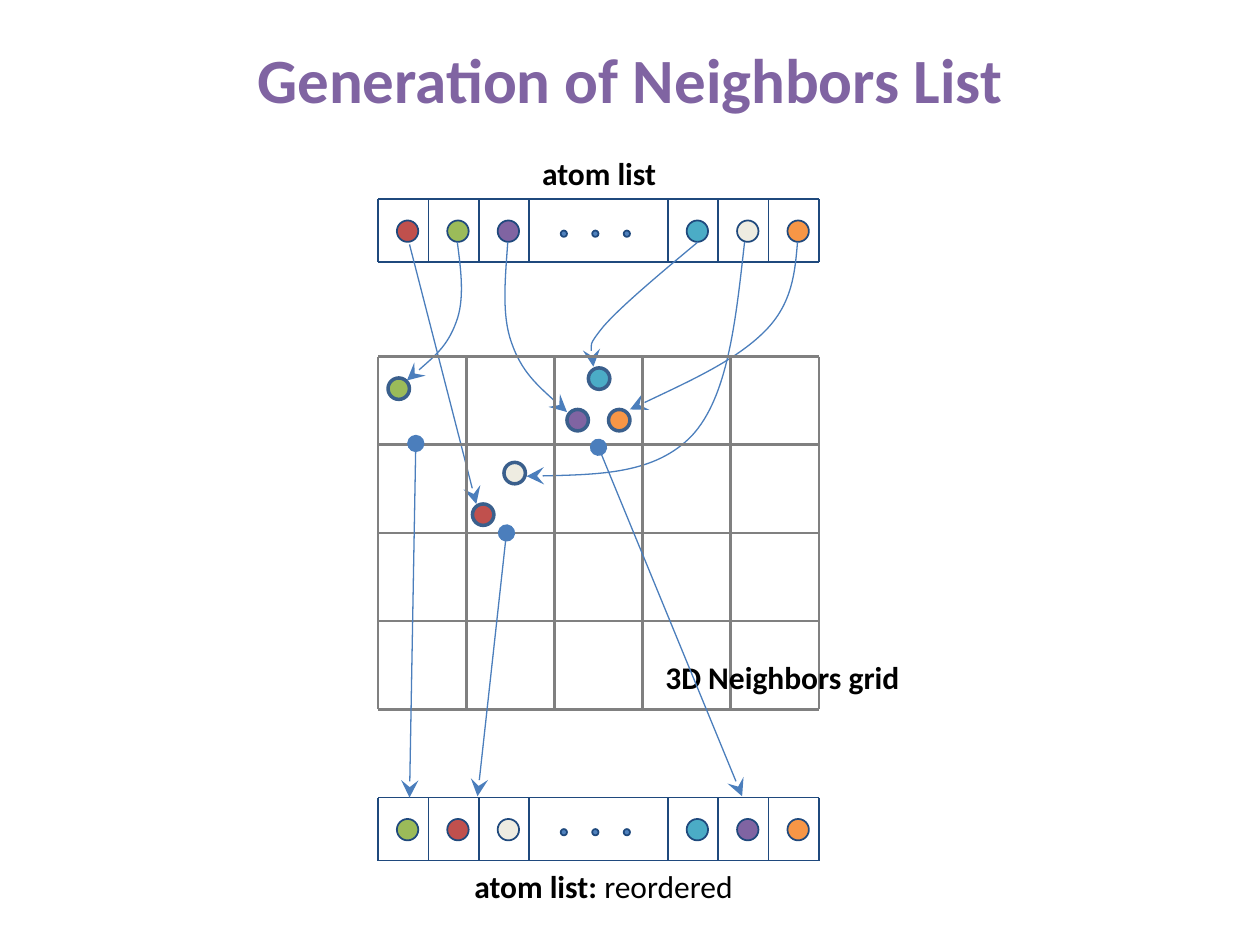
from dataclasses import dataclass
from itertools import accumulate

from lxml import etree
from pptx import Presentation
from pptx.dml.color import RGBColor
from pptx.enum.shapes import MSO_CONNECTOR, MSO_SHAPE
from pptx.enum.text import MSO_ANCHOR, MSO_AUTO_SIZE, PP_ALIGN
from pptx.oxml.ns import qn
from pptx.util import Inches, Pt

STRAIGHT = MSO_CONNECTOR.STRAIGHT
OVAL = MSO_SHAPE.OVAL
CENTER = PP_ALIGN.CENTER
MIDDLE = MSO_ANCHOR.MIDDLE
GROW = MSO_AUTO_SIZE.SHAPE_TO_FIT_TEXT


@dataclass(frozen=True)
class Theme:
    font: str = "Calibri"
    title_size: int = 36
    label_size: int = 18
    title: str = "8064A2"
    text: str = "000000"
    list_line: str = "1F497D"
    grid_line: str = "808080"
    atom_line: str = "3A5F8C"
    arrow: str = "4B7EBC"
    ellipsis: str = "4F81BD"
    list_width: float = 1
    grid_width: float = 1.5
    atom_width: float = 2
    arrow_width: float = 0.75


ATOM_COLORS = {
    "red": "C0504D", "green": "9BBB59", "purple": "8064A2",
    "teal": "4BACC6", "ivory": "EEECE1", "orange": "F79646",
}
ATOM_SIZE = 0.17
LIST_LEFT, LIST_HEIGHT = 3, 0.5
CELL_WIDTHS = [0.4] * 3 + [1.1] + [0.4] * 3
GRID_LEFT, GRID_TOP, GRID_CELL = 3, 2.83, 0.7
GRID_COLUMNS, GRID_ROWS = 5, 4

GRID_ATOMS = {
    "red": (3.75, 4), "green": (3.08, 3), "purple": (4.5, 3.25),
    "teal": (4.67, 2.92), "ivory": (4, 3.67), "orange": (4.83, 3.25),
}
# Each route is a start point followed by control, control, end per curve.
CURVED_ROUTES = [
    [(6.33, 1.92), (6.31, 2.16), (6.29, 2.41), (6.07, 2.63),
     (5.84, 2.86), (5.42, 3.05), (5, 3.25)],
    [(3.63, 1.92), (3.66, 2.15), (3.69, 2.38), (3.62, 2.56),
     (3.55, 2.75), (3.39, 2.88), (3.23, 3.02)],
    [(4.03, 1.92), (4.01, 2.21), (3.98, 2.5), (4.06, 2.72),
     (4.14, 2.95), (4.32, 3.11), (4.5, 3.27)],
    [(5.54, 1.92), (5.24, 2.17), (4.93, 2.43), (4.79, 2.59),
     (4.66, 2.75), (4.69, 2.83), (4.71, 2.91)],
    [(5.91, 1.92), (5.84, 2.54), (5.78, 3.15), (5.49, 3.46),
     (5.2, 3.76), (4.69, 3.77), (4.18, 3.78)],
]
REORDER_ROUTES = [
    ((3.3, 3.52), (3.25, 6.33)),
    ((4.02, 4.23), (3.79, 6.32)),
    ((4.75, 3.55), (5.89, 6.32)),
]


class Diagram:
    def __init__(self, slide, theme, shapes=None):
        self.slide = slide
        self.theme = theme
        self.shapes = shapes or slide.shapes

    def group(self):
        """Return a diagram that draws into a new group on the same slide."""
        return Diagram(self.slide, self.theme, self.shapes.add_group_shape().shapes)

    def add_text(self, paragraph, text, size, color, bold=True):
        run = paragraph.add_run()
        run.text = text
        run.font.name = self.theme.font
        run.font.size = Pt(size)
        run.font.bold = bold
        run.font.color.rgb = RGBColor.from_string(color)

    def title(self, text):
        title = self.slide.shapes.title
        title.left, title.top = Inches(0), Inches(0)
        title.width, title.height = Inches(10), Inches(1.25)
        title.text_frame.vertical_anchor = MIDDLE
        paragraph = title.text_frame.paragraphs[0]
        paragraph.alignment = CENTER
        self.add_text(paragraph, text, self.theme.title_size, self.theme.title)

    def label(self, left, top, width, *parts):
        """Add a centred label made of (text, bold) parts."""
        box = self.shapes.add_textbox(Inches(left), Inches(top), Inches(width), Inches(0.4))
        box.text_frame.word_wrap = True
        box.text_frame.auto_size = GROW
        paragraph = box.text_frame.paragraphs[0]
        paragraph.alignment = CENTER
        for text, bold in parts:
            self.add_text(paragraph, text, self.theme.label_size, self.theme.text, bold)

    def stroke(self, shape, color, width):
        shape.line.color.rgb = RGBColor.from_string(color)
        shape.line.width = Pt(width)

    def line(self, start, end, color, width):
        line = self.shapes.add_connector(STRAIGHT, *map(Inches, (*start, *end)))
        self.stroke(line, color, width)
        etree.SubElement(line._element.spPr, qn("a:effectLst"))
        return line

    def circle(self, left, top, size, fill, color, width):
        circle = self.shapes.add_shape(OVAL, *map(Inches, (left, top, size, size)))
        circle.shadow.inherit = False
        circle.fill.solid()
        circle.fill.fore_color.rgb = RGBColor.from_string(fill)
        self.stroke(circle, color, width)

    def arrowheads(self, shape, **ends):
        line_properties = shape._element.spPr.find(qn("a:ln"))
        for end, kind in ends.items():
            etree.SubElement(line_properties, qn(f"a:{end}"), type=kind, w="lg", len="lg")

    def arrow(self, start, end, **ends):
        line = self.line(start, end, self.theme.arrow, self.theme.arrow_width)
        self.arrowheads(line, **ends, tailEnd="stealth")

    def curved_arrow(self, route):
        start, *points = [(Inches(x), Inches(y)) for x, y in route]
        builder = self.shapes.build_freeform(*start)
        builder.add_line_segments(points, close=False)
        curve = builder.convert_to_shape()
        segments = list(curve._element.iter(qn("a:lnTo")))
        for first in range(0, len(segments), 3):
            bezier = etree.Element(qn("a:cubicBezTo"))
            segments[first].addprevious(bezier)
            for segment in segments[first:first + 3]:
                bezier.append(segment[0])
                segment.getparent().remove(segment)
        curve.shadow.inherit = False
        curve.fill.background()
        self.stroke(curve, self.theme.arrow, self.theme.arrow_width)
        self.arrowheads(curve, tailEnd="stealth")

    def rules(self, xs, ys, color, width):
        """Draw a lattice of lines through every x and y position."""
        for y in ys:
            self.line((xs[0], y), (xs[-1], y), color, width)
        for x in xs:
            self.line((x, ys[0]), (x, ys[-1]), color, width)

    def atom_list(self, top, atoms):
        """Draw a row of cells holding atoms on both sides of an ellipsis."""
        outline = self.theme.list_line, self.theme.list_width
        edges = list(accumulate(CELL_WIDTHS, initial=LIST_LEFT))
        self.rules(edges, [top, top + LIST_HEIGHT], *outline)
        for index in range(3):
            self.circle(4.45 + 0.25 * index, top + 0.25, 0.05, self.theme.ellipsis, *outline)
        for left, atom in zip(edges[:3] + edges[4:7], atoms):
            self.circle(left + 0.15, top + 0.17, ATOM_SIZE, ATOM_COLORS[atom], *outline)


def main():
    presentation = Presentation()
    presentation.slide_width, presentation.slide_height = Inches(10), Inches(7.5)
    slide = presentation.slides.add_slide(presentation.slide_layouts[5])
    theme = Theme()
    diagram = Diagram(slide, theme)
    diagram.title("Generation of Neighbors List")

    initial = diagram.group()
    initial.label(4.17, 1.17, 1.17, ("atom list", True))
    initial.atom_list(1.58, ["red", "green", "purple", "teal", "ivory", "orange"])

    for atom, (left, top) in GRID_ATOMS.items():
        diagram.circle(left, top, ATOM_SIZE, ATOM_COLORS[atom], theme.atom_line, theme.atom_width)
    diagram.arrow((3.25, 1.94), (3.78, 4))
    for route in CURVED_ROUTES:
        diagram.curved_arrow(route)

    grid = diagram.group()
    columns = [GRID_LEFT + GRID_CELL * i for i in range(GRID_COLUMNS + 1)]
    rows = [GRID_TOP + GRID_CELL * i for i in range(GRID_ROWS + 1)]
    grid.rules(columns, rows, theme.grid_line, theme.grid_width)
    grid.label(5.17, 5.17, 2.08, ("3D Neighbors grid", True))

    reordered = diagram.group()
    reordered.label(3.5, 6.83, 2.58, ("atom list: ", True), ("reordered", False))
    reordered.atom_list(6.33, ["green", "red", "ivory", "teal", "purple", "orange"])
    for start, end in REORDER_ROUTES:
        diagram.arrow(start, end, headEnd="oval")

    presentation.save("out.pptx")


if __name__ == "__main__":
    main()
